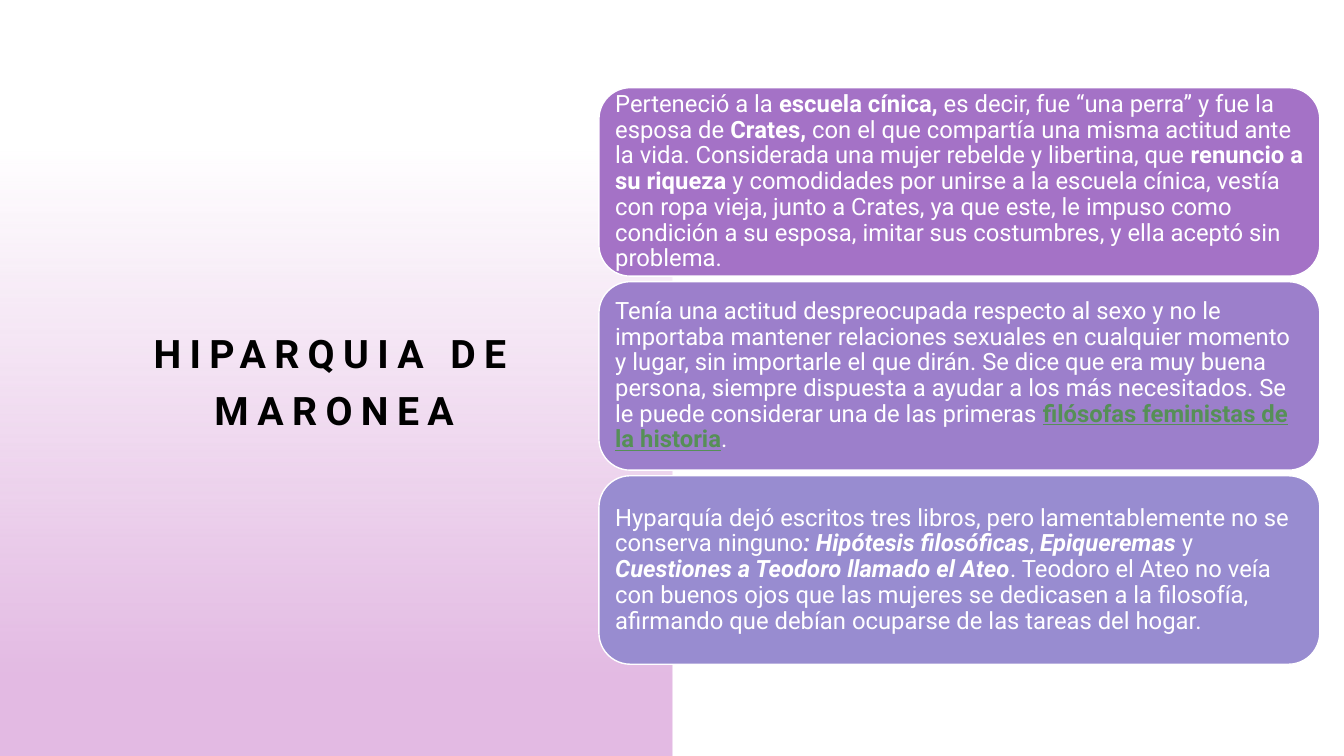
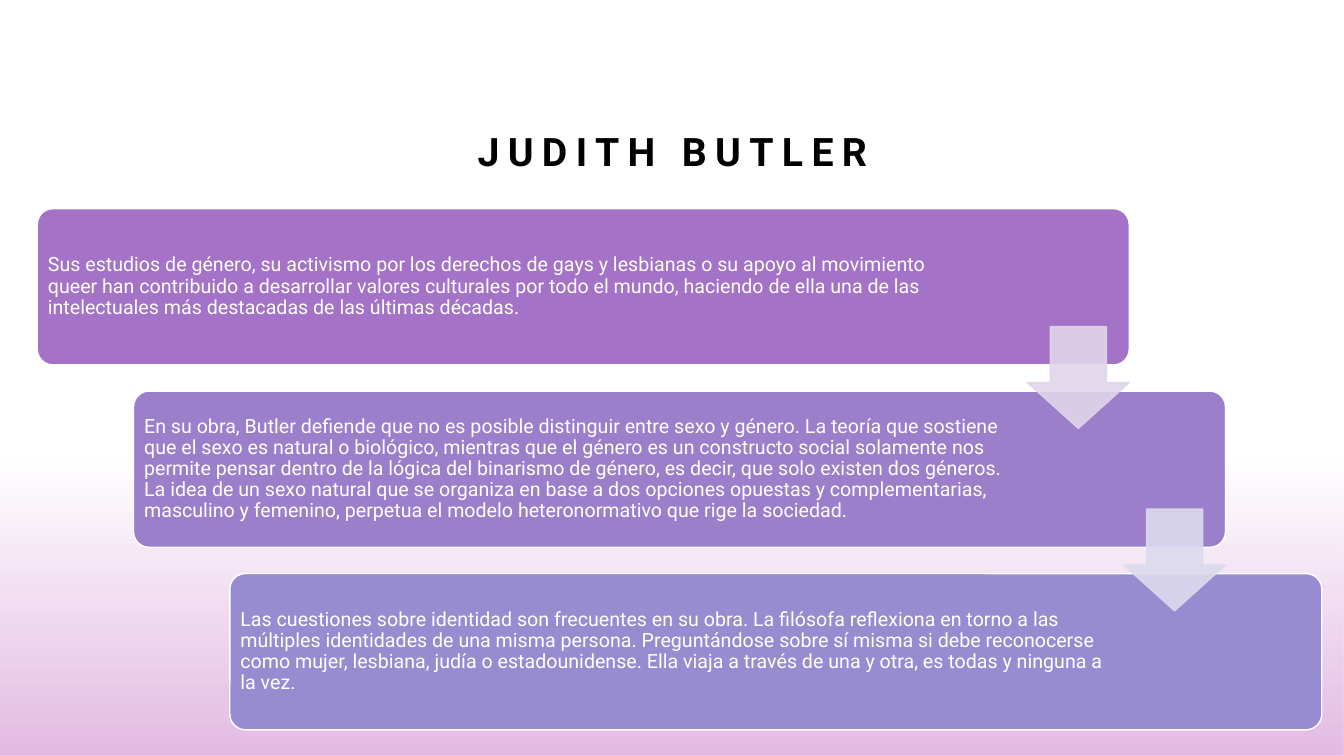
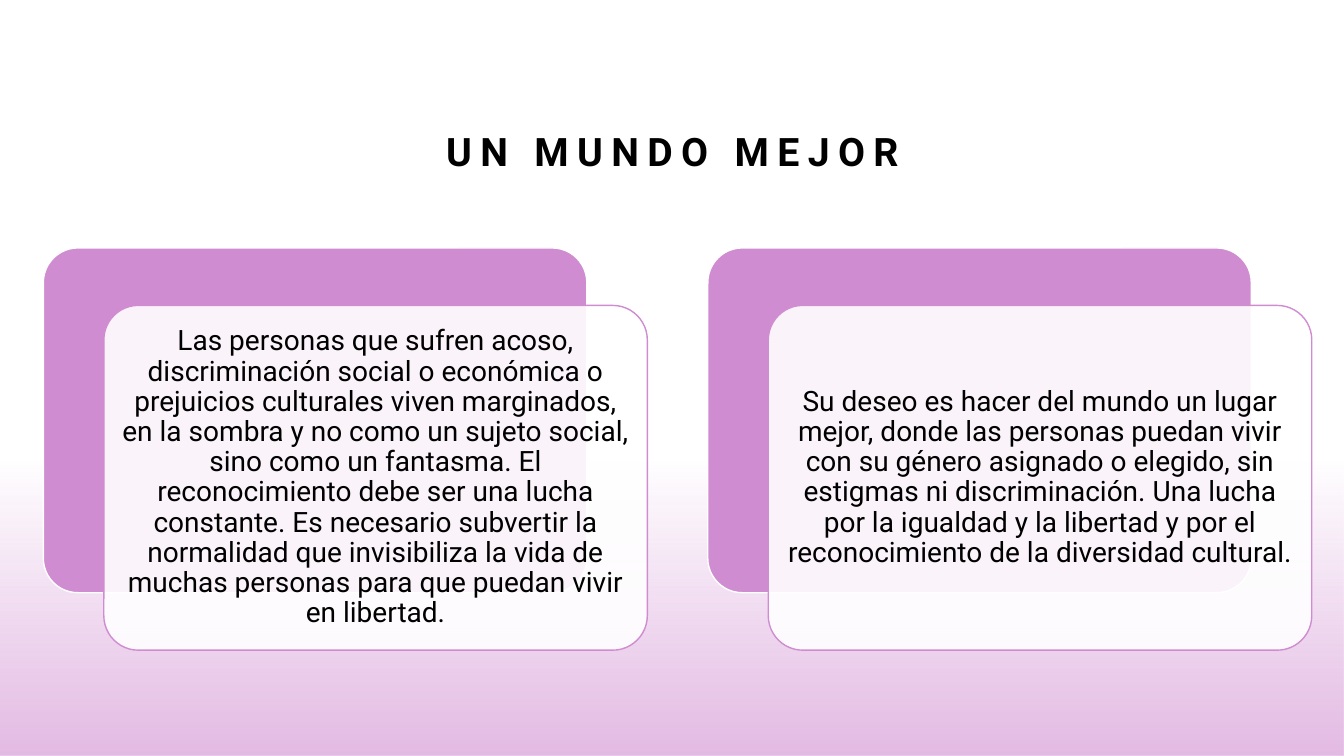
import dataclasses

import lxml.etree
import pptx
import pptx.dml.color
import pptx.enum.shapes
import pptx.enum.text
import pptx.oxml.ns
import pptx.util

Inches = pptx.util.Inches
SHAPE = pptx.enum.shapes.MSO_SHAPE
ALIGN = pptx.enum.text.PP_ALIGN
ANCHOR = pptx.enum.text.MSO_ANCHOR


@dataclasses.dataclass(frozen=True)
class Theme:
    font: str = "Roboto"
    white: str = "FFFFFF"
    black: str = "000000"
    pink: str = "E3BAE3"
    orchid: str = "D08CD0"
    link: str = "568F57"
    steps: tuple = ("A472C6", "9C7FCB", "988CD0")
    arrows: tuple = ("E0D5EA", "DDDAEE")
    title: int = 28
    large: int = 20
    body: int = 17
    small: int = 14


THEME = Theme()
WIDE, HIGH = 13.33, 7.5

# Content: runs are (text, marks), where b is bold, i italic, u a link
HIPARQUIA = [
    [
        ("Perteneció a la ", ""),
        ("escuela cínica,", "b"),
        (" es decir, fue “una perra” y fue la esposa de ", ""),
        ("Crates,", "b"),
        (" con el que compartía una misma actitud ante la vida. Considerada "
         "una mujer rebelde y libertina, que", ""),
        (" renuncio a su riqueza", "b"),
        (" y comodidades por unirse a la escuela cínica, vestía con ropa "
         "vieja, junto a Crates, ya que este, le impuso como condición a su "
         "esposa, imitar sus costumbres, y ella aceptó sin problema.", ""),
    ],
    [
        ("Tenía una actitud despreocupada respecto al sexo y no le importaba "
         "mantener relaciones sexuales en cualquier momento y lugar, sin "
         "importarle el que dirán. Se dice que era muy buena persona, siempre "
         "dispuesta a ayudar a los más necesitados. Se le puede considerar "
         "una de las primeras ", ""),
        ("filósofas feministas de la historia", "bu"),
        (".", ""),
    ],
    [
        ("Hyparquía dejó escritos tres libros, pero lamentablemente no se "
         "conserva ninguno", ""),
        (": Hipótesis filosóficas", "bi"),
        (",", ""),
        (" Epiqueremas ", "bi"),
        ("y", ""),
        (" Cuestiones a Teodoro llamado el Ateo", "bi"),
        (". Teodoro el Ateo no veía con buenos ojos que las mujeres se "
         "dedicasen a la filosofía, afirmando que debían ocuparse de las "
         "tareas del hogar.", ""),
    ],
]

# Each step: text, free room on the right
BUTLER = [
    ("Sus estudios de género, su activismo por los derechos de gays y "
     "lesbianas o su apoyo al movimiento queer han contribuido a desarrollar "
     "valores culturales por todo el mundo, haciendo de ella una de "
     "las intelectuales más destacadas de las últimas décadas.", 1.65),
    ("En su obra, Butler defiende que no es posible distinguir entre sexo y "
     "género. La teoría que sostiene que el sexo es natural o biológico, "
     "mientras que el género es un constructo social solamente nos permite "
     "pensar dentro de la lógica del binarismo de género, es decir, que solo "
     "existen dos géneros. La idea de un sexo natural que se organiza en base "
     "a dos opciones opuestas y complementarias, masculino y femenino, "
     "perpetua el modelo heteronormativo que rige la sociedad.", 2.03),
    ("Las cuestiones sobre identidad son frecuentes en su obra. La filósofa "
     "reflexiona en torno a las múltiples identidades de una misma persona. "
     "Preguntándose sobre sí misma si debe reconocerse como mujer, lesbiana, "
     "judía o estadounidense. Ella viaja a través de una y otra, es todas y "
     "ninguna a la vez.", 2.03),
]

MUNDO = [
    "Las personas que sufren acoso, discriminación social o económica o "
    "prejuicios culturales viven marginados, en la sombra y no como un sujeto "
    "social, sino como un fantasma. El reconocimiento debe ser una lucha "
    "constante. Es necesario subvertir la normalidad que invisibiliza la vida "
    "de muchas personas para que puedan vivir en libertad.",
    "Su deseo es hacer del mundo un lugar mejor, donde las personas puedan "
    "vivir con su género asignado o elegido, sin estigmas ni discriminación. "
    "Una lucha por la igualdad y la libertad y por el reconocimiento de la "
    "diversidad cultural.",
]


# Helpers
def rgb(code):
    return pptx.dml.color.RGBColor.from_string(code)


def spread(first, last, count):
    return [first + (last - first) * i / (count - 1) for i in range(count)]


def fade(node, alpha):
    """Set the opacity, in percent, of every colour below a node."""
    qn = pptx.oxml.ns.qn
    for color in node.iter(qn("a:srgbClr")):
        lxml.etree.SubElement(color, qn("a:alpha")).set("val", str(alpha * 1000))


def block(slide, kind, box, fill, edge, adjust=(), alpha=100):
    shape = slide.shapes.add_shape(kind, *map(Inches, box))
    shape.shadow.inherit = False
    for i, value in enumerate(adjust):
        shape.adjustments[i] = value
    shape.fill.solid()
    shape.fill.fore_color.rgb = rgb(fill)
    shape.line.color.rgb = rgb(edge)
    shape.line.width = pptx.util.Pt(1)
    if alpha < 100:
        props = shape.element.spPr
        fade(props.find(pptx.oxml.ns.qn("a:solidFill")), alpha)
        if edge == fill:
            fade(props.find(pptx.oxml.ns.qn("a:ln")), alpha)
    return shape


def haze(slide, box, start, end):
    """Draw a band that goes from clear at the top to pink."""
    shape = slide.shapes.add_shape(SHAPE.RECTANGLE, *map(Inches, box))
    shape.shadow.inherit = False
    shape.line.fill.background()
    shape.fill.gradient()
    shape.fill.gradient_angle = 270
    stops = shape.fill.gradient_stops
    for stop, place in zip(stops, (start, end)):
        stop.position = place
        stop.color.rgb = rgb(THEME.pink)
    fade(next(shape.element.spPr.iter(pptx.oxml.ns.qn("a:gs"))), 0)


def write(shape, runs, size, color, align=ALIGN.LEFT, inset=None, right=None,
          anchor=ANCHOR.MIDDLE, space=0.9):
    frame = shape.text_frame
    frame.word_wrap = True
    frame.vertical_anchor = anchor
    if inset is not None:
        frame.margin_left = frame.margin_top = frame.margin_bottom = Inches(inset)
        frame.margin_right = Inches(right or inset)
    para = frame.paragraphs[0]
    para.alignment = align
    para.line_spacing = space
    for text, marks in runs:
        run = para.add_run()
        run.text = text
        font = run.font
        font.name, font.size = THEME.font, pptx.util.Pt(size)
        font.bold, font.italic = "b" in marks, "i" in marks
        font.underline = "u" in marks
        font.color.rgb = rgb(THEME.link if "u" in marks else color)


def head(slide, text, box=(1.67, 0.83, 10, 0.95), anchor=ANCHOR.BOTTOM):
    shape = slide.shapes.add_textbox(*map(Inches, box))
    write(shape, [(text, "b")], THEME.title, THEME.black, ALIGN.CENTER,
          anchor=anchor, space=1.2)
    run = shape.text_frame.paragraphs[0].runs[0]
    run.font._element.set("spc", "600")


def base(slide, title):
    head(slide, title)
    haze(slide, (0, 4.09, WIDE, 3.41), 0.14, 1)


# Slides
def first(slide):
    haze(slide, (0, 0, WIDE / 2, HIGH), 0.2, 0.9)
    head(slide, "HIPARQUIA DE MARONEA", (1.32, 2.08, 3.99, 3.31), ANCHOR.MIDDLE)
    tops = spread(0.87, 4.72, len(HIPARQUIA))
    for runs, top, fill in zip(HIPARQUIA, tops, THEME.steps):
        card = block(slide, SHAPE.ROUNDED_RECTANGLE, (5.94, top, 7.15, 1.87),
                     fill, THEME.white)
        write(card, runs, THEME.body, THEME.white, inset=0.07)


def second(slide):
    base(slide, "JUDITH BUTLER")
    count = len(BUTLER)
    spots = list(zip(spread(0.37, 2.28, count), spread(2.07, 5.69, count)))
    for (text, room), (left, top), fill in zip(BUTLER, spots, THEME.steps):
        card = block(slide, SHAPE.ROUNDED_RECTANGLE, (left, top, 10.83, 1.55),
                     fill, THEME.white, [0.1])
        write(card, [(text, "")], THEME.small, THEME.white, inset=0.06, right=room)
    for (left, top), fill in zip(spots, THEME.arrows):
        block(slide, SHAPE.DOWN_ARROW, (left + 9.82, top + 1.17, 1.01, 1.01),
              fill, fill, [0.55, 0.45], 90)


def third(slide):
    base(slide, "UN MUNDO MEJOR")
    wide, high, top = 5.39, 3.42, 2.46
    for text, left in zip(MUNDO, spread(0.43, 7.02, len(MUNDO))):
        block(slide, SHAPE.ROUNDED_RECTANGLE, (left, top, wide, high),
              THEME.orchid, THEME.white, [0.1])
        card = block(slide, SHAPE.ROUNDED_RECTANGLE,
                     (left + 0.6, top + 0.57, wide, high),
                     THEME.white, THEME.orchid, [0.1], 90)
        write(card, [(text, "")], THEME.large, THEME.black, ALIGN.CENTER, 0.08)


def main():
    deck = pptx.Presentation()
    deck.slide_width, deck.slide_height = Inches(WIDE), Inches(HIGH)
    for draw in (first, second, third):
        draw(deck.slides.add_slide(deck.slide_layouts[6]))
    deck.save("out.pptx")


if __name__ == "__main__":
    main()
